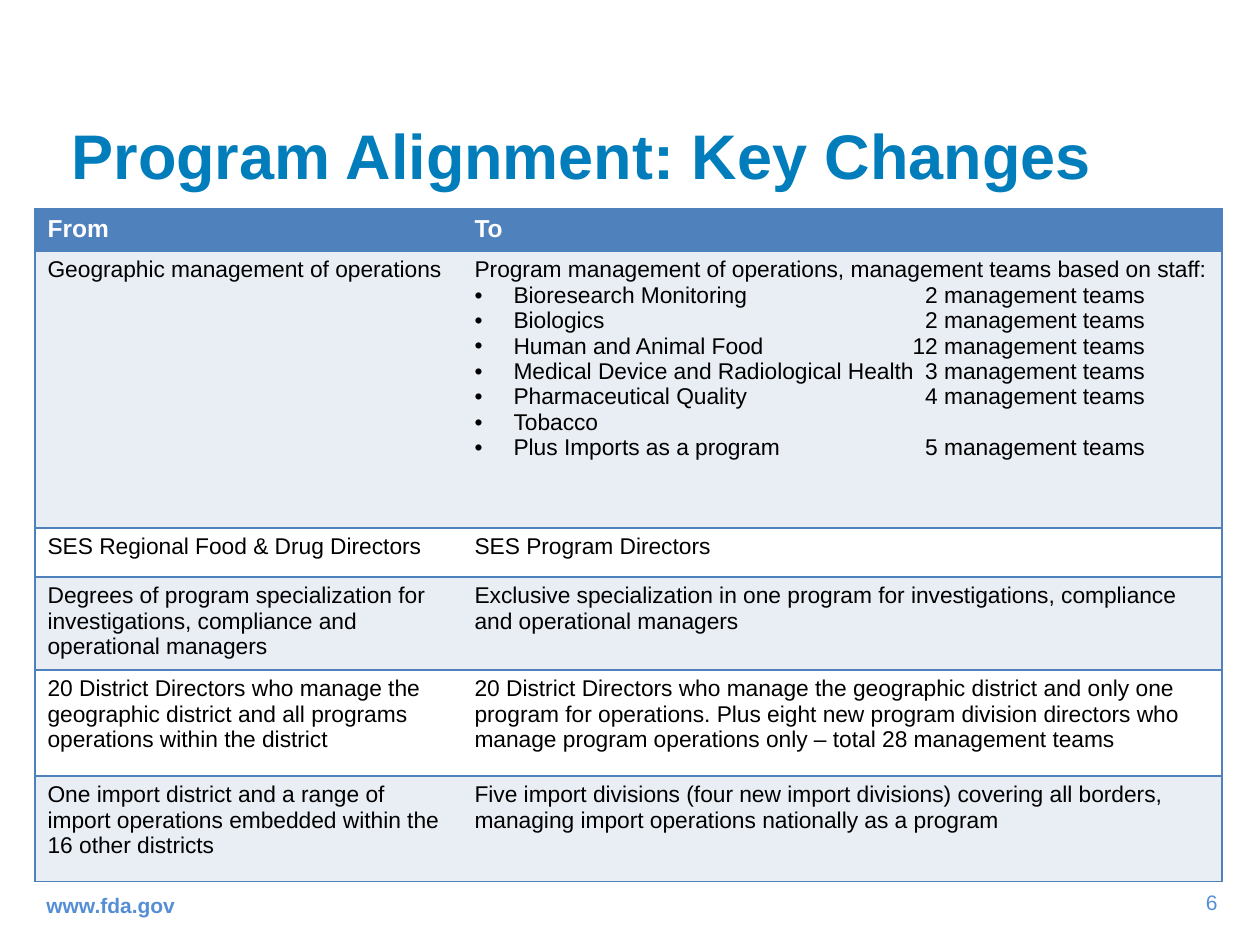
from dataclasses import dataclass
from lxml.etree import SubElement
from pptx import Presentation
from pptx.dml.color import RGBColor
from pptx.enum.text import MSO_ANCHOR as Anchor, PP_ALIGN as Align
from pptx.oxml import parse_xml
from pptx.oxml.ns import nsdecls, qn
from pptx.util import Pt


@dataclass(frozen=True)
class Theme:
    font: str = "Arial"
    title: str = "007DBA"
    foot: str = "558ED5"
    head: str = "4F81BD"
    band: str = "E9EDF4"
    white: str = "FFFFFF"
    ink: str = "000000"
    title_pt: int = 36
    head_pt: int = 14
    body_pt: int = 13
    foot_pt: int = 12


T = Theme()
INDENT = 39
TAB = 670
COLS = [427, 760]
HEIGHTS = [42, 277, 49, 93, 106, 106]
TEAMS = [
    ("Bioresearch Monitoring", "2 management teams"),
    ("Biologics", "2 management teams"),
    ("Human and Animal Food", "12 management teams"),
    ("Medical Device and Radiological Health", "3 management teams"),
    ("Pharmaceutical Quality", "4 management teams"),
    ("Tobacco",),
    ("Plus Imports as a program", "5 management teams"),
]
ROWS = [
    ("From", "To"),
    ("Geographic management of operations",
     "Program management of operations, management teams based on staff:"),
    ("SES Regional Food & Drug Directors", "SES Program Directors"),
    ("Degrees of program specialization for investigations, compliance "
     "and operational managers",
     "Exclusive specialization in one program for investigations, compliance "
     "and operational managers"),
    ("20 District Directors who manage the geographic district and all "
     "programs operations within the district",
     "20 District Directors who manage the geographic district and only one "
     "program for operations. Plus eight new program division directors who "
     "manage program operations only – total 28 management teams"),
    ("One import district and a range of import operations embedded within "
     "the 16 other districts",
     "Five import divisions (four new import divisions) covering all borders, "
     "managing import operations nationally as a program"),
]


def px(n):
    return round(n * 914400 / 126)


def write(para, text, size, color, bold=False, align=Align.LEFT):
    para.text = text
    para.alignment = align
    font = para.font
    font.name, font.size, font.bold = T.font, Pt(size), bold
    font.color.rgb = RGBColor.from_string(color)


def place(shape, x, y, w, h):
    shape.left, shape.top, shape.width, shape.height = map(px, (x, y, w, h))


def label(slide, text, box, anchor, wrap=True, **form):
    frame = slide.shapes.add_textbox(*map(px, box)).text_frame
    frame.word_wrap = wrap
    frame.vertical_anchor = anchor
    write(frame.paragraphs[0], text, **form)


def bullet(para):
    """Add a hanging bullet and a right tab for the team count."""
    prop = para._p.get_or_add_pPr()
    prop.set("marL", str(px(INDENT)))
    prop.set("indent", str(-px(INDENT)))
    SubElement(prop, qn("a:buFont"), typeface=T.font)
    SubElement(prop, qn("a:buChar"), char="•")
    tabs = SubElement(prop, qn("a:tabLst"))
    SubElement(tabs, qn("a:tab"), pos=str(px(TAB)), algn="r")


def border(cell, sides):
    """Draw the named sides and clear the others."""
    prop = cell._tc.get_or_add_tcPr()
    for i, side in enumerate("LRTB"):
        fill = "<a:noFill/>"
        if side in sides:
            fill = f'<a:solidFill><a:srgbClr val="{T.head}"/></a:solidFill>'
        prop.insert(i, parse_xml(
            f'<a:ln{side} {nsdecls("a")} w="12700">{fill}</a:ln{side}>'))


def add_table(slide):
    size = (sum(COLS), sum(HEIGHTS))
    grid = slide.shapes.add_table(
        len(ROWS), len(COLS), *map(px, (35, 209, *size))).table
    for col, wide in zip(grid.columns, COLS):
        col.width = px(wide)
    for r, (row, high) in enumerate(zip(ROWS, HEIGHTS)):
        grid.rows[r].height = px(high)
        fill = T.head if r == 0 else T.band if r % 2 else T.white
        form = dict(size=T.body_pt, color=T.ink)
        if r == 0:
            form = dict(size=T.head_pt, color=T.white, bold=True)
        for c, text in enumerate(row):
            cell = grid.cell(r, c)
            cell.fill.solid()
            cell.fill.fore_color.rgb = RGBColor.from_string(fill)
            border(cell, "RTB" if c else "LTB")
            write(cell.text_frame.paragraphs[0], text, **form)
    frame = grid.cell(1, 1).text_frame
    for team in TEAMS:
        para = frame.add_paragraph()
        bullet(para)
        write(para, "\t".join(team), T.body_pt, T.ink)


def main():
    deck = Presentation()
    deck.slide_width, deck.slide_height = px(1260), px(945)
    slide = deck.slides.add_slide(deck.slide_layouts[5])
    title = slide.shapes.title
    place(title, 59, 91, 1173, 127)
    title.text_frame.vertical_anchor = Anchor.MIDDLE
    write(title.text_frame.paragraphs[0], "Program Alignment: Key Changes",
          T.title_pt, T.title, bold=True)
    add_table(slide)
    foot = dict(size=T.foot_pt, color=T.foot)
    label(slide, "www.fda.gov", (34, 880, 399, 50), Anchor.MIDDLE,
          bold=True, **foot)
    label(slide, "6", (1178, 883, 52, 38), Anchor.TOP, wrap=False,
          align=Align.RIGHT, **foot)
    deck.save("out.pptx")


if __name__ == "__main__":
    main()
